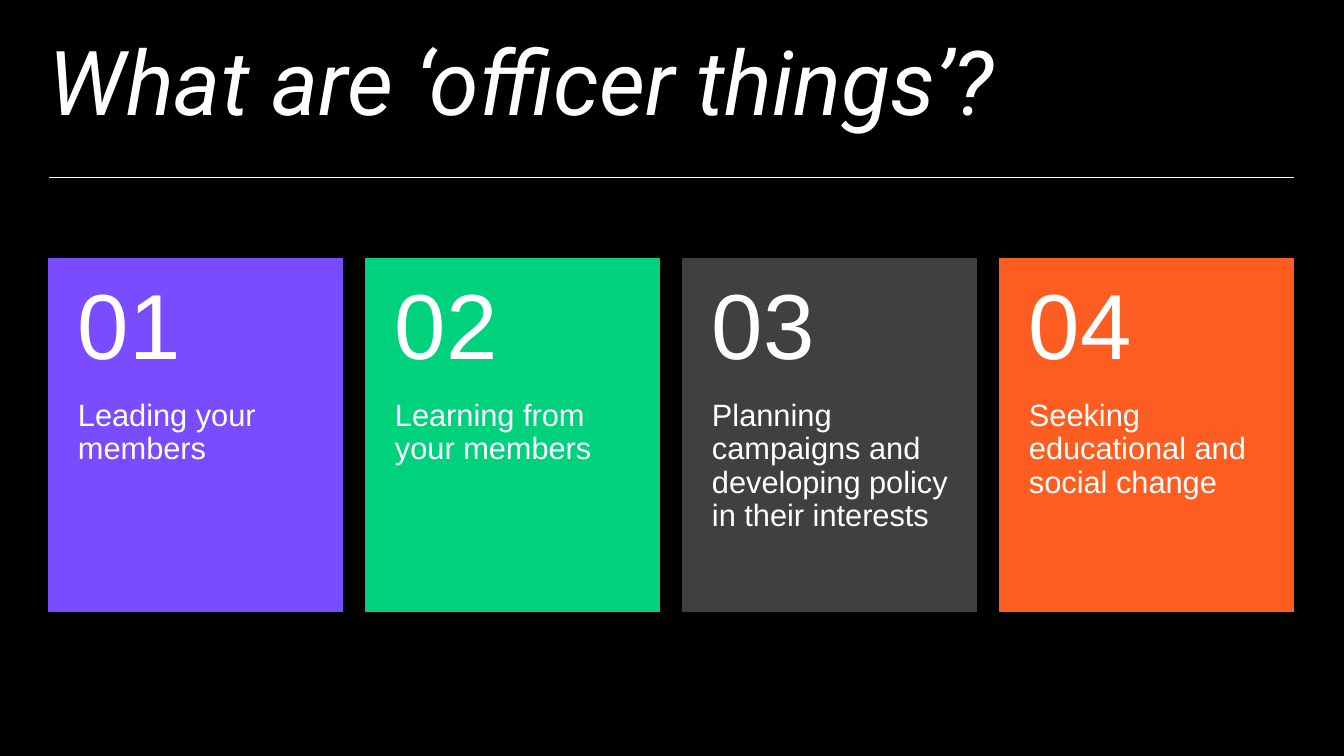
from dataclasses import dataclass

from lxml.etree import SubElement
from pptx import Presentation
from pptx.dml.color import RGBColor
from pptx.enum.shapes import MSO_CONNECTOR, MSO_SHAPE
from pptx.enum.text import MSO_ANCHOR, PP_ALIGN
from pptx.oxml.ns import qn
from pptx.slide import Slide
from pptx.util import Emu, Pt

SLIDE_W, SLIDE_H = 1344, 756
EMU_PER_PX = 12192000 / SLIDE_W

BLACK = RGBColor(0x00, 0x00, 0x00)
WHITE = RGBColor(0xFF, 0xFF, 0xFF)
PURPLE = RGBColor(0x79, 0x4D, 0xFF)
GREEN = RGBColor(0x00, 0xD1, 0x7D)
GREY = RGBColor(0x40, 0x40, 0x40)
ORANGE = RGBColor(0xFE, 0x5D, 0x21)

LEFT, RIGHT = 49, 1294
RULE_Y = 177
CARD_TOP, CARD_W, CARD_H = 259, 294, 353
CARD_PITCH = 317
NUMBER_H = 141

TITLE_FONT = {"name": "Roboto", "size": Pt(64), "italic": True}
NUMBER_FONT = {"name": "Arial", "size": Pt(66)}
BODY_FONT = {"name": "Arial", "size": Pt(22)}


@dataclass(frozen=True)
class Box:
    left: int
    top: int
    width: int
    height: int

    def emu(self) -> tuple[Emu, ...]:
        return tuple(px(n) for n in (self.left, self.top, self.width, self.height))


@dataclass(frozen=True)
class Insets:
    left: int = 0
    top: int = 0
    right: int = 0
    bottom: int = 0


@dataclass(frozen=True)
class Card:
    color: RGBColor
    text: str


CARDS = [
    Card(PURPLE, "Leading your members"),
    Card(GREEN, "Learning from your members"),
    Card(GREY, "Planning campaigns and developing policy in their interests"),
    Card(ORANGE, "Seeking educational and social change"),
]


def px(n: int) -> Emu:
    return Emu(round(n * EMU_PER_PX))


def add_text(slide: Slide, box: Box, text: str, font: dict, insets: Insets = Insets(),
             anchor: MSO_ANCHOR = MSO_ANCHOR.MIDDLE, line_spacing: float = 1.0) -> None:
    tf = slide.shapes.add_textbox(*box.emu()).text_frame
    frame_format = {
        "word_wrap": True,
        "vertical_anchor": anchor,
        "margin_left": px(insets.left),
        "margin_top": px(insets.top),
        "margin_right": px(insets.right),
        "margin_bottom": px(insets.bottom),
    }
    for name, value in frame_format.items():
        setattr(tf, name, value)
    p = tf.paragraphs[0]
    p.alignment = PP_ALIGN.LEFT
    p.line_spacing = line_spacing
    r = p.add_run()
    r.text = text
    for name, value in font.items():
        setattr(r.font, name, value)
    r.font.color.rgb = WHITE


def add_rule(slide: Slide) -> None:
    line = slide.shapes.add_connector(
        MSO_CONNECTOR.STRAIGHT, px(LEFT), px(RULE_Y), px(RIGHT), px(RULE_Y))
    line.line.color.rgb = WHITE
    line.line.width = Pt(0.5)
    SubElement(line._element.spPr, qn("a:effectLst"))


def add_card(slide: Slide, index: int, card: Card) -> None:
    left = LEFT + index * CARD_PITCH
    sp = slide.shapes.add_shape(
        MSO_SHAPE.RECTANGLE, *Box(left, CARD_TOP, CARD_W, CARD_H).emu())
    sp.shadow.inherit = False
    sp.fill.solid()
    sp.fill.fore_color.rgb = card.color
    sp.line.color.rgb = card.color
    sp.line.width = Pt(0.75)
    add_text(slide, Box(left, CARD_TOP + NUMBER_H, CARD_W, CARD_H - NUMBER_H),
             card.text, BODY_FONT, Insets(29, 0, 29, 36), MSO_ANCHOR.TOP, 0.9)
    add_text(slide, Box(left, CARD_TOP, CARD_W, NUMBER_H),
             f"{index + 1:02d}", NUMBER_FONT, Insets(29, 18, 29, 18), line_spacing=0.9)


def main() -> None:
    prs = Presentation()
    prs.slide_width, prs.slide_height = px(SLIDE_W), px(SLIDE_H)
    slide = prs.slides.add_slide(prs.slide_layouts[6])
    slide.background.fill.solid()
    slide.background.fill.fore_color.rgb = BLACK
    add_text(slide, Box(LEFT, 25, RIGHT - LEFT, 109), "What are ‘officer things’?", TITLE_FONT)
    add_rule(slide)
    for index, card in enumerate(CARDS):
        add_card(slide, index, card)
    prs.save("out.pptx")


if __name__ == "__main__":
    main()
